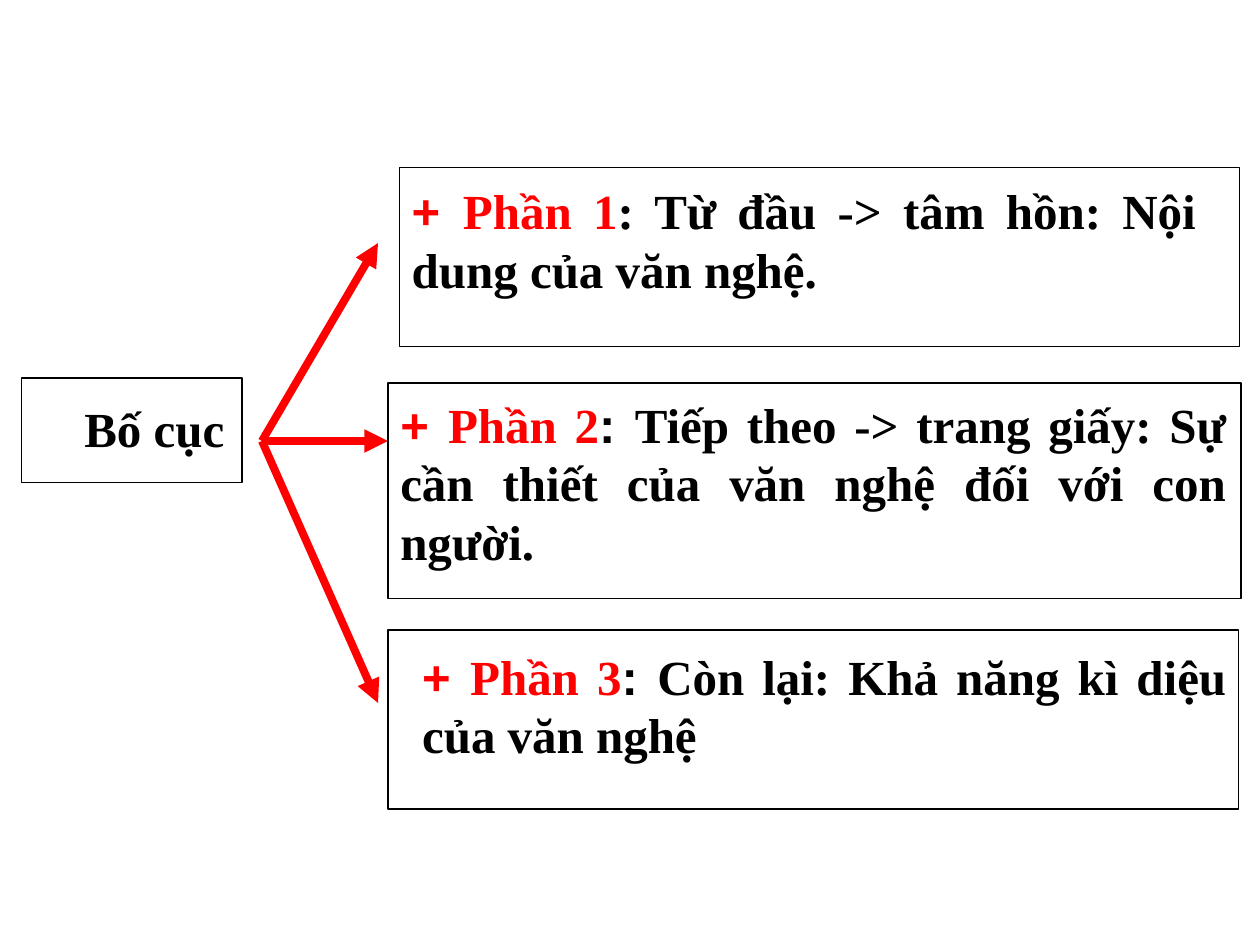
from dataclasses import dataclass

from lxml.etree import SubElement
from pptx import Presentation
from pptx.dml.color import RGBColor
from pptx.enum.shapes import MSO_CONNECTOR, MSO_SHAPE
from pptx.enum.text import MSO_AUTO_SIZE, PP_ALIGN
from pptx.oxml.ns import qn
from pptx.slide import Slide
from pptx.util import Cm, Pt

COLOURS = {"accent": "FF0000", "ink": "000000"}
SERIF = "Times New Roman"
SANS = "Arial"


@dataclass
class Area:
    left: float
    top: float
    width: float
    height: float

    def lengths(self) -> list[Cm]:
        return [Cm(value) for value in (self.left, self.top, self.width, self.height)]


@dataclass
class Span:
    text: str
    font: str = SERIF
    colour: str = "ink"


@dataclass
class Part:
    frame: Area
    label: Area
    number: int
    colon_font: str
    summary: str
    arrow_end: tuple[float, float]

    def spans(self) -> list[Span]:
        return [
            Span("+ ", SANS, "accent"),
            Span(f"Phần {self.number}", SERIF, "accent"),
            Span(": ", self.colon_font),
            Span(self.summary),
        ]


ARROW_START = (5.28, 8.89)
TOPIC_FRAME = Area(0.43, 7.62, 4.45, 2.11)
TOPIC_LABEL = Area(1.45, 7.9, 3.35, 1.45)
PARTS = [
    Part(Area(8.05, 3.38, 16.94, 3.61), Area(8.05, 3.51, 16.31, 2.64), 1, SERIF,
         "Từ đầu -> tâm hồn: Nội dung của văn nghệ. ", (7.62, 4.9)),
    Part(Area(7.82, 7.72, 17.2, 4.34), Area(7.82, 7.82, 17.15, 3.84), 2, SANS,
         "Tiếp theo -> trang giấy: Sự cần thiết của văn nghệ đối với con người. ",
         (7.82, 8.89)),
    Part(Area(7.82, 12.7, 17.15, 3.61), Area(8.26, 12.9, 16.71, 2.64), 3, SANS,
         "Còn lại: Khả năng kì diệu của văn nghệ ", (7.62, 14.17)),
]


def colour_of(name: str) -> RGBColor:
    return RGBColor.from_string(COLOURS[name])


def draw_arrow(page: Slide, end: tuple[float, float]) -> None:
    points = [Cm(value) for value in (*ARROW_START, *end)]
    arrow = page.shapes.add_connector(MSO_CONNECTOR.STRAIGHT, *points)
    arrow.line.color.rgb = colour_of("accent")
    arrow.line.width = Pt(4.5)
    SubElement(arrow.line._get_or_add_ln(), qn("a:tailEnd"), type="triangle")
    SubElement(arrow._element.spPr, qn("a:effectLst"))


def draw_frame(page: Slide, area: Area) -> None:
    frame = page.shapes.add_shape(MSO_SHAPE.RECTANGLE, *area.lengths())
    frame.shadow.inherit = False
    frame.fill.background()
    frame.line.color.rgb = colour_of("ink")
    frame.line.width = Pt(0.75)


def draw_label(page: Slide, area: Area, spans: list[Span], wrap: bool = True) -> None:
    box = page.shapes.add_textbox(*area.lengths())
    box.text_frame.word_wrap = wrap
    box.text_frame.auto_size = MSO_AUTO_SIZE.SHAPE_TO_FIT_TEXT
    para = box.text_frame.paragraphs[0]
    para.alignment = PP_ALIGN.JUSTIFY if wrap else PP_ALIGN.LEFT
    for span in spans:
        run = para.add_run()
        run.text = span.text
        run.font.name = span.font
        run.font.size = Pt(28)
        run.font.bold = True
        run.font.color.rgb = colour_of(span.colour)


def main() -> None:
    deck = Presentation()
    deck.slide_width, deck.slide_height = Cm(25.4), Cm(19.05)
    page = deck.slides.add_slide(deck.slide_layouts[6])
    for part in PARTS:
        draw_arrow(page, part.arrow_end)
    draw_frame(page, TOPIC_FRAME)
    draw_label(page, TOPIC_LABEL, [Span("Bố cục")], wrap=False)
    for part in PARTS:
        draw_frame(page, part.frame)
        draw_label(page, part.label, part.spans())
    deck.save("out.pptx")


if __name__ == "__main__":
    main()
